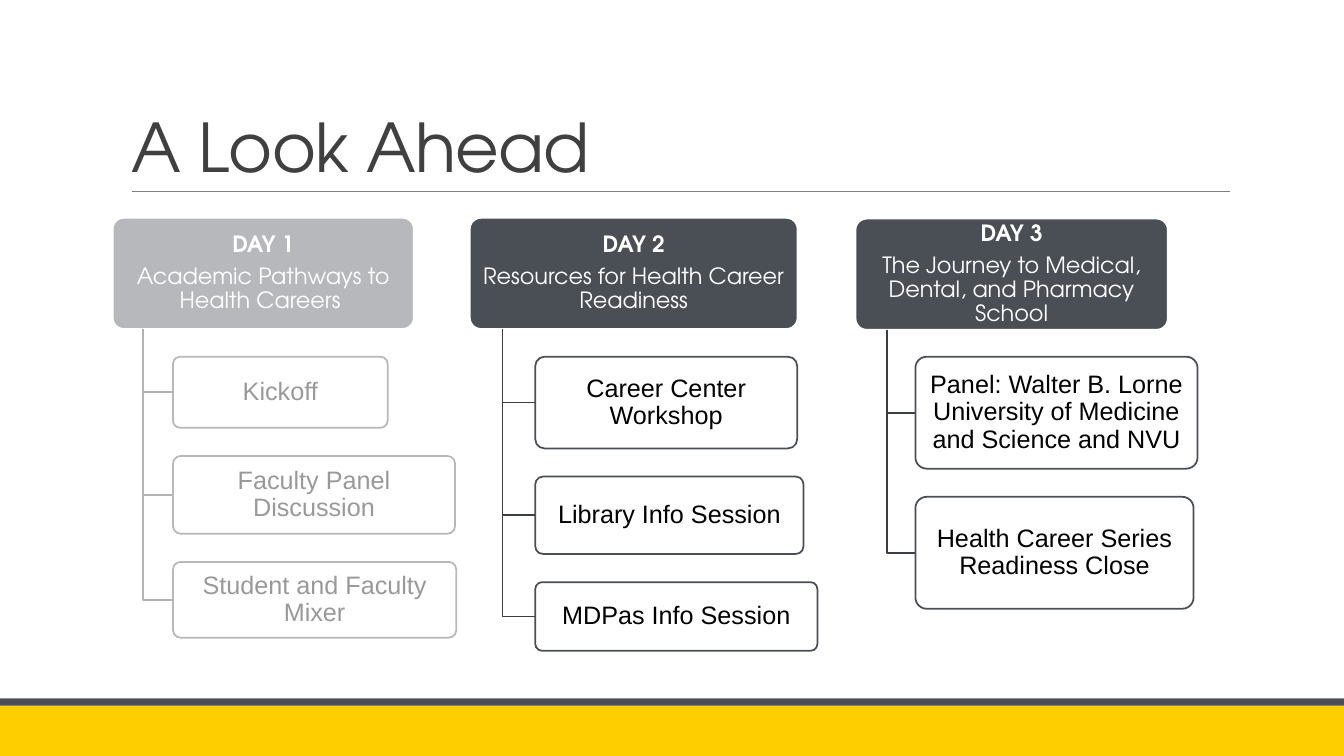
import pptx
import pptx.util
import pptx.dml.color
import pptx.enum.shapes
import pptx.enum.text
import pptx.oxml.ns
from lxml import etree

Cm, Pt = pptx.util.Cm, pptx.util.Pt
RGBColor = pptx.dml.color.RGBColor
SHAPE = pptx.enum.shapes.MSO_SHAPE
ALIGN = pptx.enum.text.PP_ALIGN
ANCHOR = pptx.enum.text.MSO_ANCHOR

# Content: lengths in cm; each session is (text, width, height)
TITLE = "A Look Ahead"
DAYS = [
    {"day": "DAY 1", "theme": "Academic Pathways to Health Careers ",
     "left": 2.84, "top": 5.49, "width": 7.59, "session_left": 4.36,
     "sessions": [("Kickoff", 5.41, 1.79),
                  ("Faculty Panel Discussion", 7.11, 1.96),
                  ("Student and Faculty Mixer", 7.14, 1.91)]},
    {"day": "DAY 2", "theme": "Resources for Health Career Readiness",
     "left": 11.84, "top": 5.49, "width": 8.26, "session_left": 13.49,
     "sessions": [("Career Center Workshop", 6.6, 2.31),
                  ("Library Info Session", 6.76, 1.95),
                  ("MDPas Info Session", 7.11, 1.73)]},
    {"day": "DAY 3", "theme": "The Journey to Medical, Dental, and Pharmacy School",
     "left": 21.56, "top": 5.51, "width": 7.87, "session_left": 23.07,
     "sessions": [("Panel: Walter B. Lorne University of Medicine and Science and NVU",
                   7.11, 2.82),
                  ("Health Career Series Readiness Close", 7.01, 2.82)]},
]

# Colours
WHITE = RGBColor(0xFF, 0xFF, 0xFF)
BLACK = RGBColor(0x00, 0x00, 0x00)
SLATE = RGBColor(0x4A, 0x4F, 0x55)
DARK_SLATE = RGBColor(0x3B, 0x3F, 0x44)
GOLD = RGBColor(0xFF, 0xCE, 0x00)
TITLE_GREY = RGBColor(0x40, 0x40, 0x40)
RULE_GREY = RGBColor(0x80, 0x80, 0x80)

# Formats
HEADING_FONT = "TeX Gyre Adventor"
TITLE_FORMAT = {"name": HEADING_FONT, "size": Pt(48), "color": TITLE_GREY}
DAY_FORMAT = {"name": HEADING_FONT, "size": Pt(16), "color": WHITE, "bold": True}
THEME_FORMAT = {**DAY_FORMAT, "bold": False}
SESSION_FORMAT = {"name": "Arial", "size": Pt(18), "color": BLACK}
BOX_FRAME = {"word_wrap": True, "vertical_anchor": ANCHOR.MIDDLE,
             "margin_left": Cm(0.15), "margin_right": Cm(0.15),
             "margin_top": Cm(0.13), "margin_bottom": Cm(0.13)}
TITLE_FRAME = {"word_wrap": True, "vertical_anchor": ANCHOR.BOTTOM}
BOX_PARAGRAPH = {"alignment": ALIGN.CENTER, "line_spacing": 0.9}

# Layout
SLIDE_WIDTH, SLIDE_HEIGHT = 33.87, 19.05
HEADER_HEIGHT = 2.8
TRUNK_SHARE = 0.1
SESSION_TOP, SESSION_GAP = 8.99, 0.71


def apply(target, values):
    for name, value in values.items():
        if name == "color":
            target.color.rgb = value
        else:
            setattr(target, name, value)


def set_line(line, color, width):
    line.color.rgb = color
    line.width = Pt(width)


def add_box(kind, left, top, width, height, fill, outline=None, opacity=100):
    shape = slide.shapes.add_shape(kind, Cm(left), Cm(top), Cm(width), Cm(height))
    shape.shadow.inherit = False
    shape.fill.solid()
    shape.fill.fore_color.rgb = fill
    if opacity < 100:
        color = shape.fill._xPr.find(".//" + pptx.oxml.ns.qn("a:srgbClr"))
        etree.SubElement(color, pptx.oxml.ns.qn("a:alpha"), val=str(opacity * 1000))
    if outline is None:
        shape.line.fill.background()
    else:
        set_line(shape.line, outline, 1.25)
    if kind == SHAPE.ROUNDED_RECTANGLE:
        shape.adjustments[0] = 0.1
    return shape


def write(shape, lines, frame_format, paragraph_format):
    frame = shape.text_frame
    apply(frame, frame_format)
    for index, (text, font_format) in enumerate(lines):
        paragraph = frame.add_paragraph() if index else frame.paragraphs[0]
        apply(paragraph, paragraph_format)
        if index < len(lines) - 1:
            paragraph.space_after = Pt(5.6)
        run = paragraph.add_run()
        run.text = text
        apply(run.font, font_format)


def add_branch(trunk, top, box_left, middle):
    builder = slide.shapes.build_freeform(Cm(trunk), Cm(top))
    builder.add_line_segments([(Cm(trunk), Cm(middle)), (Cm(box_left), Cm(middle))],
                              close=False)
    branch = builder.convert_to_shape()
    branch.shadow.inherit = False
    branch.fill.background()
    set_line(branch.line, DARK_SLATE, 1.25)


presentation = pptx.Presentation()
presentation.slide_width, presentation.slide_height = Cm(SLIDE_WIDTH), Cm(SLIDE_HEIGHT)
slide = presentation.slides.add_slide(presentation.slide_layouts[6])

# Footer bands
add_box(SHAPE.RECTANGLE, 0, 17.78, SLIDE_WIDTH, 1.27, GOLD)
add_box(SHAPE.RECTANGLE, 0, 17.6, SLIDE_WIDTH, 0.18, SLATE)

# Title and rule
rule = slide.shapes.add_connector(pptx.enum.shapes.MSO_CONNECTOR.STRAIGHT,
                                  Cm(3.33), Cm(4.82), Cm(31), Cm(4.82))
set_line(rule.line, RULE_GREY, 0.5)
etree.SubElement(rule._element.spPr, pptx.oxml.ns.qn("a:effectLst"))
title = slide.shapes.add_textbox(Cm(3.07), Cm(0.79), Cm(27.94), Cm(4.04))
write(title, [(TITLE, TITLE_FORMAT)], TITLE_FRAME, {"line_spacing": 0.85})
title.text_frame.paragraphs[0].runs[0].font._element.set("spc", "-50")

# Day columns
for day in DAYS:
    header = add_box(SHAPE.ROUNDED_RECTANGLE, day["left"], day["top"], day["width"],
                     HEADER_HEIGHT, SLATE, WHITE)
    write(header, [(day["day"], DAY_FORMAT), (day["theme"], THEME_FORMAT)],
          BOX_FRAME, BOX_PARAGRAPH)
    trunk = day["left"] + TRUNK_SHARE * day["width"]
    top = SESSION_TOP
    for text, width, height in day["sessions"]:
        add_branch(trunk, day["top"] + HEADER_HEIGHT, day["session_left"],
                   top + height / 2)
        session = add_box(SHAPE.ROUNDED_RECTANGLE, day["session_left"], top, width,
                          height, WHITE, SLATE, opacity=90)
        write(session, [(text, SESSION_FORMAT)], BOX_FRAME, BOX_PARAGRAPH)
        top += height + SESSION_GAP

# Veil that fades the first day
add_box(SHAPE.RECTANGLE, 2.59, 5.13, 9.17, 11.18, WHITE, opacity=60)

presentation.save("out.pptx")
